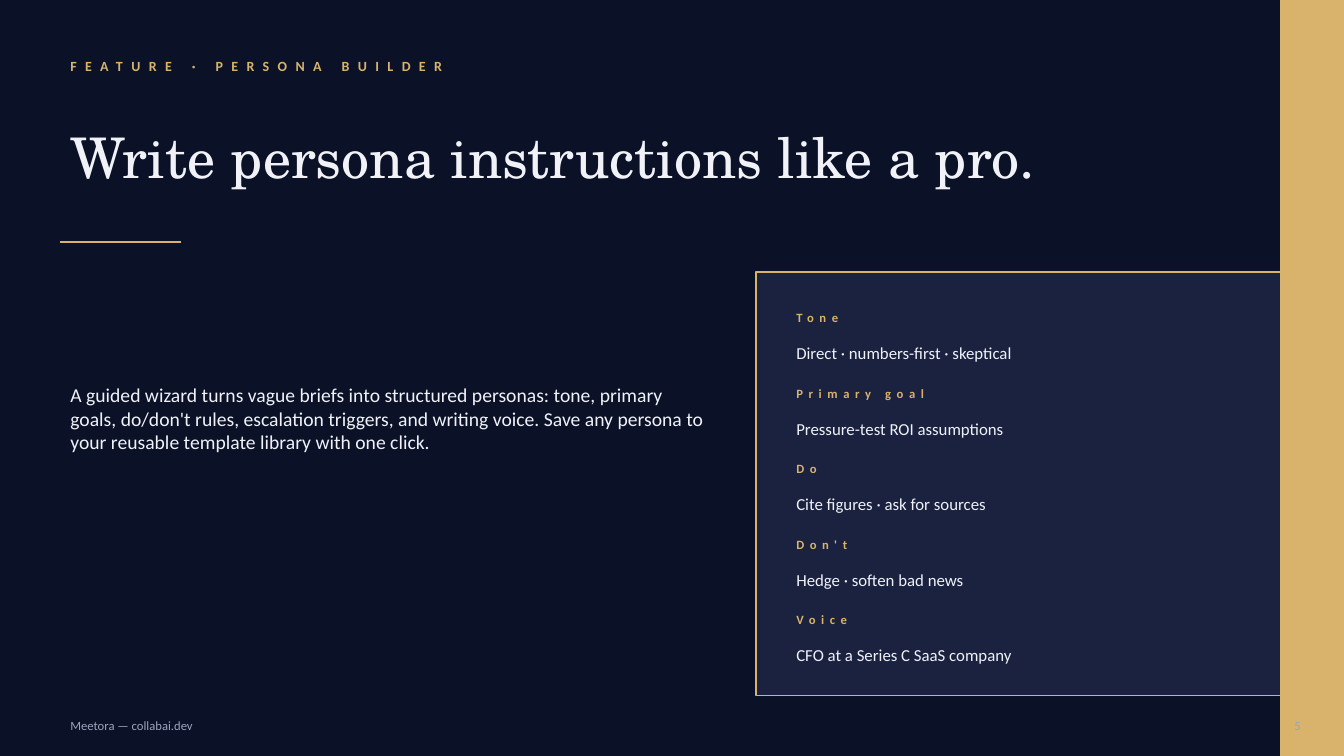
from pptx import Presentation
from pptx.dml.color import RGBColor
from pptx.enum.shapes import MSO_CONNECTOR, MSO_SHAPE
from pptx.enum.text import MSO_ANCHOR, MSO_AUTO_SIZE, PP_ALIGN
from pptx.oxml.ns import qn
from pptx.util import Inches, Pt
from lxml.etree import SubElement

COLORS = {"night": "0B1228", "panel": "1A2240", "gold": "D9B36C",
          "light": "F0F2F8", "muted": "9CA3BC"}
SANS, SERIF = "Calibri", "TeX Gyre Schola"
PERSONA = [
    ("Tone", "Direct · numbers-first · skeptical"),
    ("Primary goal", "Pressure-test ROI assumptions"),
    ("Do", "Cite figures · ask for sources"),
    ("Don't", "Hedge · soften bad news"),
    ("Voice", "CFO at a Series C SaaS company"),
]


def color(name):
    """Return a palette colour."""
    return RGBColor.from_string(COLORS[name])


def write(shape, text, size, ink, font=SANS, bold=False, spacing=0, align=PP_ALIGN.LEFT):
    """Put one formatted run in a shape, centred vertically."""
    frame = shape.text_frame
    frame.word_wrap = True
    frame.auto_size = MSO_AUTO_SIZE.NONE
    frame.vertical_anchor = MSO_ANCHOR.MIDDLE
    paragraph = frame.paragraphs[0]
    paragraph.alignment = align
    run = paragraph.add_run()
    run.text = text
    run.font.name = font
    run.font.size = Pt(size)
    run.font.bold = bold
    run.font.color.rgb = color(ink)
    if spacing:
        run.font._element.set("spc", str(spacing * 100))


def add_text(slide, left, top, width, height, text, size, ink, **style):
    """Add a text box measured in inches."""
    box = slide.shapes.add_textbox(Inches(left), Inches(top), Inches(width), Inches(height))
    write(box, text, size, ink, **style)


def add_block(slide, left, top, width, height, fill):
    """Add a filled rectangle with a thin gold outline."""
    block = slide.shapes.add_shape(
        MSO_SHAPE.RECTANGLE, Inches(left), Inches(top), Inches(width), Inches(height))
    block.shadow.inherit = False
    block.fill.solid()
    block.fill.fore_color.rgb = color(fill)
    block.line.color.rgb = color("gold")
    block.line.width = Pt(1)


def add_header(slide, left, top):
    """Place the kicker, the title and the gold rule."""
    add_text(slide, left, top, 8, 0.3, "FEATURE · PERSONA BUILDER", 10, "gold",
             bold=True, spacing=6)
    title = slide.shapes.title
    title.left, title.top = Inches(left), Inches(top + 0.35)
    title.width, title.height = Inches(12), Inches(1.4)
    write(title, "Write persona instructions like a pro.", 40, "light", font=SERIF)
    rule_top = Inches(top + 1.9)
    rule = slide.shapes.add_connector(
        MSO_CONNECTOR.STRAIGHT, Inches(left), rule_top, Inches(left + 1.2), rule_top)
    rule.line.color.rgb = color("gold")
    rule.line.width = Pt(2)
    SubElement(rule._element.spPr, qn("a:effectLst"))


def add_persona_panel(slide, left, top, width, height):
    """Place the panel with its label and value pairs."""
    add_block(slide, left, top, width, height, "panel")
    margin, pitch = 0.3, 0.75
    for index, (label, value) in enumerate(PERSONA):
        row_top = top + margin + index * pitch
        add_text(slide, left + margin, row_top, 1.5, 0.3, label, 9, "gold",
                 bold=True, spacing=4)
        add_text(slide, left + margin, row_top + 0.3, width - 2 * margin, 0.4,
                 value, 12, "light")


def add_footer(slide, left, top, right):
    """Place the footer line and the page number."""
    add_text(slide, left, top, 6, 0.3, "Meetora — collabai.dev", 9, "muted")
    add_text(slide, right - 1, top, 1, 0.3, "5", 9, "muted", align=PP_ALIGN.RIGHT)


def main():
    """Build and save the slide."""
    presentation = Presentation()
    presentation.slide_width, presentation.slide_height = Inches(13.33), Inches(7.5)
    slide = presentation.slides.add_slide(presentation.slide_layouts[5])
    slide.background.fill.solid()
    slide.background.fill.fore_color.rgb = color("night")
    add_block(slide, 12.7, 0, 0.63, 7.5, "gold")
    add_footer(slide, 0.6, 7.05, 13)
    add_header(slide, 0.6, 0.5)
    add_text(slide, 0.6, 2.9, 6.5, 2.5,
             "A guided wizard turns vague briefs into structured personas: tone, primary "
             "goals, do/don't rules, escalation triggers, and writing voice. Save any "
             "persona to your reusable template library with one click.", 14, "light")
    add_persona_panel(slide, 7.5, 2.7, 5.2, 4.2)
    presentation.save("out.pptx")


if __name__ == "__main__":
    main()
